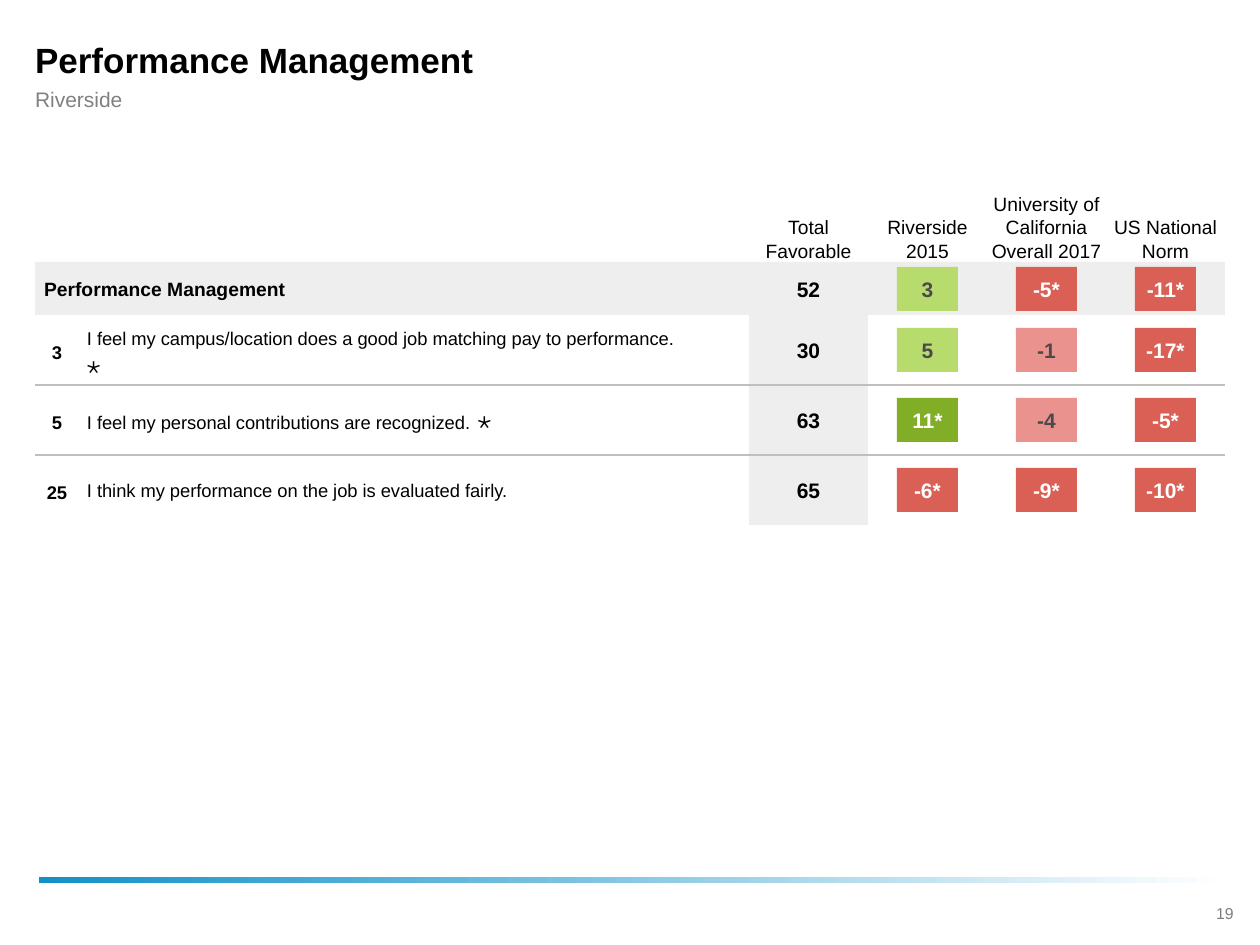
from pptx import Presentation
from pptx.dml.color import RGBColor
from pptx.enum.shapes import MSO_CONNECTOR as Connector, MSO_SHAPE as Shape
from pptx.enum.text import MSO_ANCHOR as Anchor, MSO_AUTO_SIZE as AutoSize, PP_ALIGN as Align
from pptx.oxml.ns import qn
from pptx.util import Emu, Pt
from lxml import etree

PX_PER_INCH = 126
FONT = "Arial"
BLACK = RGBColor(0x00, 0x00, 0x00)
WHITE = RGBColor(0xFF, 0xFF, 0xFF)
DARK_GREY = RGBColor(0x4A, 0x4A, 0x4A)
PAGE_GREY = RGBColor(0x7F, 0x7F, 0x7F)
SUBTITLE_GREY = RGBColor(0x80, 0x80, 0x80)
RULE_GREY = RGBColor(0xBF, 0xBF, 0xBF)
BAND_GREY = RGBColor(0xEE, 0xEE, 0xEE)
BLUE = RGBColor(0x12, 0x91, 0xC7)
GREEN = RGBColor(0x81, 0xAD, 0x27)
LIGHT_GREEN = RGBColor(0xB7, 0xDB, 0x6C)
RED = RGBColor(0xDA, 0x60, 0x56)
LIGHT_RED = RGBColor(0xE9, 0x92, 0x8E)


def px(length):
    return Emu(round(length * 914400 / PX_PER_INCH))


class SlideBuilder:
    def __init__(self, slide):
        self.slide = slide

    def set_text(self, shape, text, size, color=BLACK, bold=False, align=Align.CENTER,
                 anchor=Anchor.MIDDLE, margins=(0, 0, 0, 0), wrap=True):
        frame = shape.text_frame
        frame.word_wrap = wrap
        frame.auto_size = AutoSize.NONE
        frame.vertical_anchor = anchor
        (frame.margin_left, frame.margin_top,
         frame.margin_right, frame.margin_bottom) = map(px, margins)
        paragraph = frame.paragraphs[0]
        paragraph.add_run().text = text
        paragraph.alignment = align
        font = paragraph.font
        font.name, font.size, font.bold = FONT, Pt(size), bold
        font.color.rgb = color
        return paragraph

    def title(self, text, left, top, width, height):
        shape = self.slide.shapes.title
        shape.left, shape.top, shape.width, shape.height = map(px, (left, top, width, height))
        self.set_text(shape, text, 20, bold=True, align=Align.LEFT, margins=(0, 0, 44, 0))

    def text(self, text, left, top, width, height, size, **style):
        box = self.slide.shapes.add_textbox(*map(px, (left, top, width, height)))
        return self.set_text(box, text, size, **style)

    def rectangle(self, left, top, width, height, color):
        shape = self.slide.shapes.add_shape(
            Shape.RECTANGLE, *map(px, (left, top, width, height)))
        shape.shadow.inherit = False
        shape.fill.solid()
        shape.fill.fore_color.rgb = color
        shape.line.fill.background()
        return shape

    def gradient_bar(self, left, top, width, height, start, end):
        fill = self.rectangle(left, top, width, height, start).fill
        fill.gradient()
        fill.gradient_angle = 0
        for stop, color, position in zip(fill.gradient_stops, (start, end), (0, 1)):
            stop.color.rgb = color
            stop.position = position

    def rule(self, left, right, y):
        line = self.slide.shapes.add_connector(
            Connector.STRAIGHT, px(left), px(y), px(right), px(y))
        line.line.color.rgb = RULE_GREY
        line.line.width = Pt(0.75)
        etree.SubElement(line._element.spPr, qn("a:effectLst"))

    def score_chip(self, score, left, top):
        """A star marks a significant difference, shown in the strong colour."""
        negative, significant = score.startswith("-"), score.endswith("*")
        strong, light = (RED, LIGHT_RED) if negative else (GREEN, LIGHT_GREEN)
        chip = self.rectangle(left, top, 61, 44, strong if significant else light)
        self.set_text(chip, score, 12, WHITE if significant else DARK_GREY, bold=True,
                      margins=(0, 6, 0, 6), wrap=False)


# Table geometry
LEFT, RIGHT = 35, 1225
COLUMN_LEFT, COLUMN_WIDTH = 749, 119
HEADER_TOP, HEADER_HEIGHT = 262, 53
ROW_TOP, ROW_HEIGHT = 315, 70
CHIP_INSET = 29

COLUMN_TITLES = ["Total Favorable", "Riverside 2015",
                 "University of California Overall 2017", "US National Norm"]
SUMMARY = ("52", ["3", "-5*", "-11*"])
QUESTIONS = [  # number, wording, starred, favorable, differences
    ("3", "I feel my campus/location does a good job matching pay to performance.",
     True, "30", ["5", "-1", "-17*"]),
    ("5", "I feel my personal contributions are recognized.",
     True, "63", ["11*", "-4", "-5*"]),
    ("25", "I think my performance on the job is evaluated fairly.",
     False, "65", ["-6*", "-9*", "-10*"]),
]


def add_scores(builder, favorable, differences, middle):
    builder.text(favorable, COLUMN_LEFT, middle - 12, COLUMN_WIDTH, 24, 12, bold=True)
    for column, score in enumerate(differences, start=1):
        builder.score_chip(score, COLUMN_LEFT + column * COLUMN_WIDTH + CHIP_INSET,
                           middle - 22)


def main():
    presentation = Presentation()
    presentation.slide_width, presentation.slide_height = px(1260), px(945)
    slide = presentation.slides.add_slide(presentation.slide_layouts[5])
    builder = SlideBuilder(slide)

    # Title, subtitle and footer
    builder.gradient_bar(39, 877, 1187, 6, BLUE, WHITE)
    builder.text("19", 1192, 897, 66, 32, 9, color=PAGE_GREY)
    builder.title("Performance Management", LEFT, 35, RIGHT - LEFT, 48)
    builder.text("Riverside", LEFT, 86, RIGHT - LEFT, 26, 12, color=SUBTITLE_GREY,
                 align=Align.LEFT, margins=(0, 0, 44, 0))

    # Grey summary band and favorable column
    column_lefts = [COLUMN_LEFT + i * COLUMN_WIDTH for i in range(len(COLUMN_TITLES))]
    row_tops = [ROW_TOP + i * ROW_HEIGHT for i in range(len(QUESTIONS))]
    for top in row_tops:
        builder.rectangle(COLUMN_LEFT, top, COLUMN_WIDTH, ROW_HEIGHT, BAND_GREY)
    builder.rectangle(LEFT, HEADER_TOP, COLUMN_LEFT - LEFT, HEADER_HEIGHT, BAND_GREY)
    for left in column_lefts:
        builder.rectangle(left, HEADER_TOP, COLUMN_WIDTH, HEADER_HEIGHT, BAND_GREY)

    # Column titles
    for left, label in zip(column_lefts, COLUMN_TITLES):
        builder.text(label, left, 122, COLUMN_WIDTH, 140, 11, anchor=Anchor.BOTTOM)

    # Summary row
    builder.text("Performance Management", LEFT, HEADER_TOP, COLUMN_LEFT - LEFT,
                 HEADER_HEIGHT, 11, bold=True, align=Align.LEFT, margins=(9, 0, 9, 0))
    add_scores(builder, *SUMMARY, HEADER_TOP + 27)

    # Question rows
    for top, (number, wording, starred, favorable, differences) in zip(row_tops, QUESTIONS):
        if top > ROW_TOP:
            builder.rule(LEFT, RIGHT, top)
        builder.text(number, LEFT, top + 23, 44, 28, 10.5, bold=True)
        paragraph = builder.text(wording, 78, top + 6, 643, 58, 10.5,
                                 align=Align.LEFT, margins=(9, 0, 44, 0))
        if starred:
            star = paragraph.add_run()
            star.text = " ⋆"
            star.font.size = Pt(14)
        add_scores(builder, favorable, differences, top + ROW_HEIGHT // 2)

    presentation.save("out.pptx")


if __name__ == "__main__":
    main()
